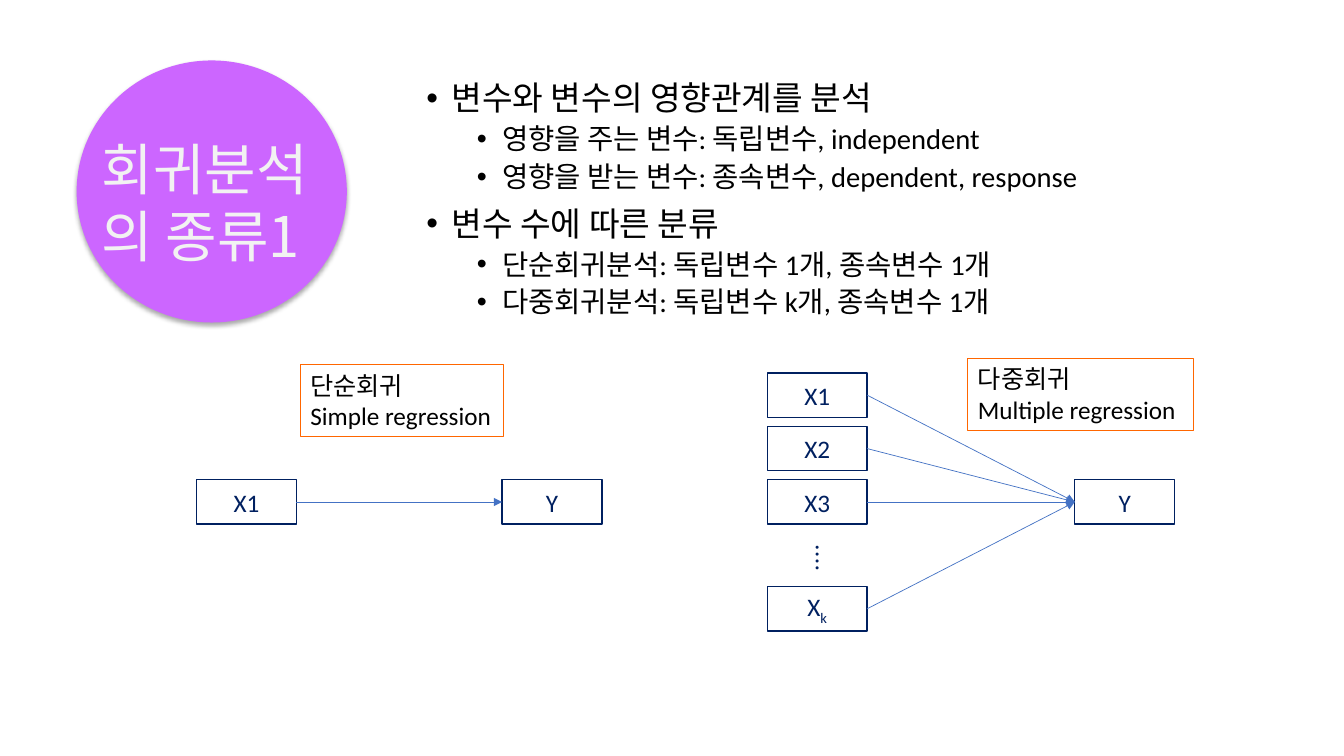
from lxml.etree import SubElement
from pptx import Presentation
from pptx.dml.color import RGBColor
from pptx.enum.shapes import MSO_CONNECTOR, MSO_SHAPE
from pptx.enum.text import MSO_ANCHOR, MSO_AUTO_SIZE, PP_ALIGN
from pptx.oxml.ns import qn
from pptx.util import Inches, Pt

PURPLE = RGBColor(0xCC, 0x66, 0xFF)
PALE = RGBColor(0xF2, 0xF2, 0xF2)
BLACK = RGBColor(0, 0, 0)
NAVY = RGBColor(0x00, 0x20, 0x60)
BLUE = RGBColor(0x44, 0x72, 0xC4)
ORANGE = RGBColor(0xFF, 0x66, 0x00)

BODY_FONT = "Calibri"
TITLE_FONT = "Noto Sans CJK KR"

# Diagram grid: every variable is one box, rows share one pitch
BOX_W, BOX_H = 0.99, 0.44
ROW_TOP, ROW_PITCH = 3.7, 0.53
Y_ROW = 2

OUTLINE = [
    (0, "변수와 변수의 영향관계를 분석"),
    (1, "영향을 주는 변수: 독립변수, independent"),
    (1, "영향을 받는 변수: 종속변수, dependent, response"),
    (0, "변수 수에 따른 분류"),
    (1, "단순회귀분석: 독립변수 1개, 종속변수 1개"),
    (1, "다중회귀분석: 독립변수 k개, 종속변수 1개"),
]


def inches(*lengths):
    return [Inches(length) for length in lengths]


def move(placeholder, box):
    placeholder.left, placeholder.top, placeholder.width, placeholder.height = inches(*box)


def add_run(paragraph, text, size, color, font=BODY_FONT):
    run = paragraph.add_run()
    run.text = text
    run.font.size, run.font.name = Pt(size), font
    run.font.color.rgb = color
    SubElement(run.font._element, qn("a:ea"), typeface=font)
    return run


def add_title(slide, box):
    """Purple disc with the title lying over it."""
    left, top, width, height = box
    disc = slide.shapes.add_shape(MSO_SHAPE.OVAL, *inches(*box))
    disc.fill.solid()
    disc.fill.fore_color.rgb = PURPLE
    disc.line.fill.background()
    disc.shadow.inherit = False
    effects = disc._element.spPr.find(qn("a:effectLst"))
    shadow = SubElement(effects, qn("a:outerShdw"), blurRad=str(Pt(3.5)),
                        dist=str(Pt(2.2)), dir="5400000", algn="t", rotWithShape="0")
    shade = SubElement(shadow, qn("a:srgbClr"), val="000000")
    SubElement(shade, qn("a:alpha"), val="32000")
    slide.shapes._spTree.insert(2, disc._element)  # behind the title

    title = slide.shapes.title
    move(title, (left + 0.15, top + 0.68, width - 0.15, 1.45))
    frame = title.text_frame
    frame.word_wrap, frame.auto_size = True, MSO_AUTO_SIZE.NONE
    frame.vertical_anchor = MSO_ANCHOR.TOP
    paragraph = frame.paragraphs[0]
    paragraph.alignment = PP_ALIGN.LEFT
    add_run(paragraph, "회귀분석의 종류1", 40, PALE, TITLE_FONT)


def add_outline(slide, box):
    """Two-level bullet list in the body placeholder."""
    body = slide.placeholders[1]
    move(body, box)
    frame = body.text_frame
    frame.auto_size = MSO_AUTO_SIZE.NONE
    for index, (level, text) in enumerate(OUTLINE):
        paragraph = frame.add_paragraph() if index else frame.paragraphs[0]
        paragraph.level = level
        paragraph.line_spacing = 0.9
        paragraph.space_before = Pt(5 if level else 10)
        properties = paragraph._p.get_or_add_pPr()
        properties.set("marL", str(Inches(0.25 + 0.5 * level)))
        properties.set("indent", str(Inches(-0.25)))
        SubElement(properties, qn("a:buFont"), typeface="Arial")
        SubElement(properties, qn("a:buChar"), char="•")
        add_run(paragraph, text, 20.4 if level else 23.8, BLACK)


def add_frame(slide, box, color, weight):
    """Unfilled rectangle with a coloured border."""
    frame = slide.shapes.add_shape(MSO_SHAPE.RECTANGLE, *inches(*box))
    frame.shadow.inherit = False
    frame.fill.background()
    frame.line.color.rgb = color
    frame.line.width = Pt(weight)
    return frame


def write_centred(holder, text, subscript=""):
    frame = holder.text_frame
    frame.word_wrap = True
    frame.vertical_anchor = MSO_ANCHOR.MIDDLE
    paragraph = frame.paragraphs[0]
    paragraph.alignment = PP_ALIGN.CENTER
    add_run(paragraph, text, 18, NAVY)
    if subscript:
        add_run(paragraph, subscript, 18, NAVY).font._element.set("baseline", "-25000")


def cell(left, row):
    return left, ROW_TOP + row * ROW_PITCH, BOX_W, BOX_H


def add_variable(slide, left, row, text, subscript=""):
    variable = add_frame(slide, cell(left, row), NAVY, 1)
    write_centred(variable, text, subscript)
    return variable


def add_arrow(slide, cause, effect):
    """Arrow from the right side of one box to the left side of another."""
    arrow = slide.shapes.add_connector(MSO_CONNECTOR.STRAIGHT, 0, 0, 0, 0)
    arrow.begin_connect(cause, 3)
    arrow.end_connect(effect, 1)
    arrow.line.color.rgb = BLUE
    arrow.line.width = Pt(0.5)
    SubElement(arrow.line._get_or_add_ln(), qn("a:tailEnd"), type="triangle")
    SubElement(arrow._element.spPr, qn("a:effectLst"))


def add_caption(slide, box, lines):
    caption = add_frame(slide, box, ORANGE, 0.75)
    frame = caption.text_frame
    frame.word_wrap, frame.auto_size = False, MSO_AUTO_SIZE.SHAPE_TO_FIT_TEXT
    frame.vertical_anchor = MSO_ANCHOR.TOP
    for index, line in enumerate(lines):
        paragraph = frame.add_paragraph() if index else frame.paragraphs[0]
        paragraph.alignment = PP_ALIGN.LEFT
        add_run(paragraph, line, 18, BLACK)


def add_regression(slide, cause_left, effect_left, causes, caption_box, caption):
    """Cause boxes in a column, each pointing to Y, under a caption."""
    effect = add_variable(slide, effect_left, Y_ROW, "Y")
    for row, *label in causes:
        add_arrow(slide, add_variable(slide, cause_left, row, *label), effect)
    add_caption(slide, caption_box, caption)


def main():
    deck = Presentation()
    deck.slide_width, deck.slide_height = inches(13.33, 7.5)
    slide = deck.slides.add_slide(deck.slide_layouts[1])

    add_title(slide, (0.76, 0.6, 2.68, 2.6))
    add_outline(slide, (4.13, 0.76, 8.43, 2.44))

    # Simple regression: one cause
    add_regression(slide, 1.95, 4.98, [(Y_ROW, "X1")],
                   (2.98, 3.62, 2.01, 0.71), ["단순회귀", "Simple regression"])

    # Multiple regression: k causes, with dots for those left out
    add_regression(slide, 7.61, 10.66,
                   [(0, "X1"), (1, "X2"), (2, "X3"), (4, "X", "k")],
                   (9.6, 3.56, 2.24, 0.71), ["다중회귀", "Multiple regression"])
    write_centred(slide.shapes.add_textbox(*inches(*cell(7.61, 3))), "⁞")

    deck.save("out.pptx")


if __name__ == "__main__":
    main()
